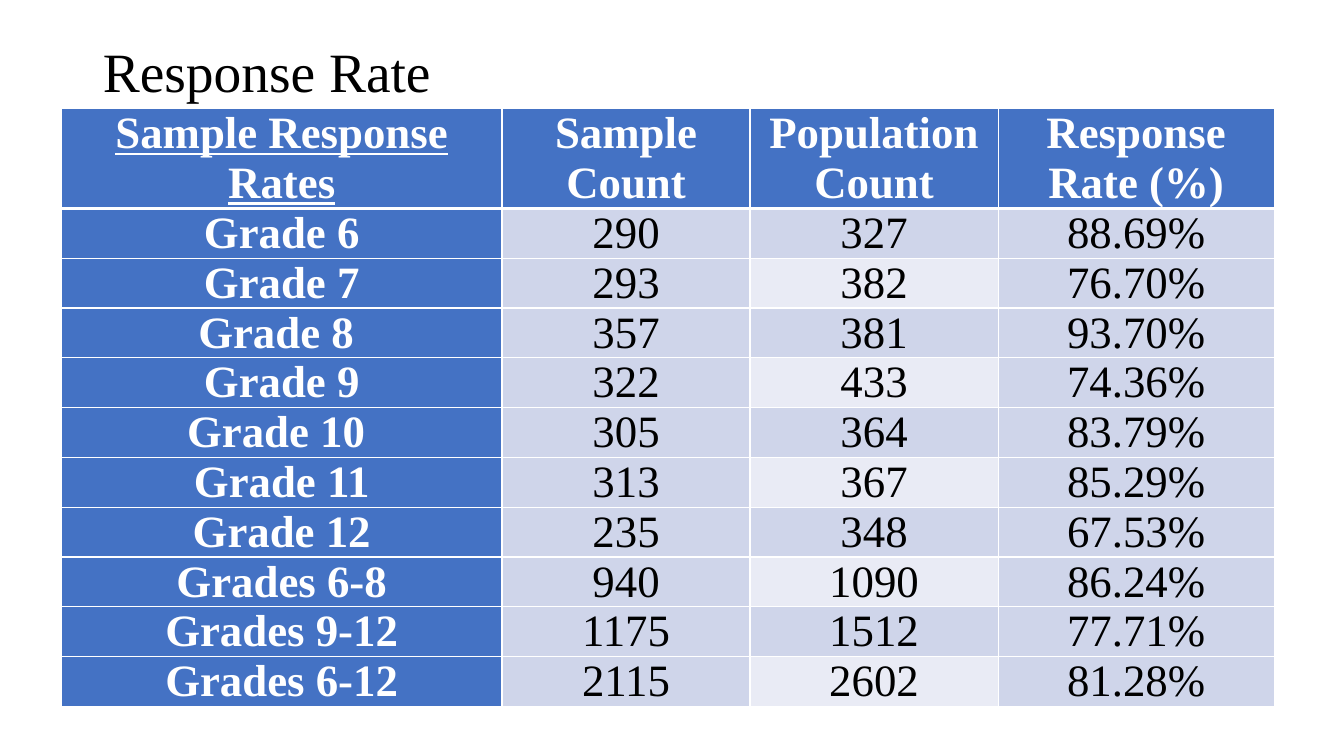
from typing import NamedTuple

from lxml import etree
from pptx import Presentation
from pptx.dml.color import RGBColor
from pptx.enum.text import MSO_ANCHOR, MSO_AUTO_SIZE, PP_ALIGN
from pptx.oxml.ns import qn
from pptx.slide import Slide
from pptx.table import _Cell
from pptx.util import Inches, Pt

LEFT = PP_ALIGN.LEFT
CENTER = PP_ALIGN.CENTER
MIDDLE = MSO_ANCHOR.MIDDLE
NO_FIT = MSO_AUTO_SIZE.NONE

BLACK = RGBColor(0x00, 0x00, 0x00)
WHITE = RGBColor(0xFF, 0xFF, 0xFF)
BLUE = RGBColor(0x44, 0x72, 0xC4)
BAND = RGBColor(0xCF, 0xD5, 0xEA)
PALE = RGBColor(0xE9, 0xEB, 0xF5)
FONT = "Times New Roman"

WIDTHS = (4.37, 2.46, 2.46, 2.74)
HEAD_HEIGHT = 0.94
ROW_HEIGHT = 0.49
THIN = 1
THICK = 3


class Rate(NamedTuple):
    label: str
    sample: str
    total: str
    rate: str


HEAD = Rate("Sample Response Rates", "Sample Count", "Population\nCount", "Response Rate (%)")
RATES = (
    Rate("Grade 6", "290", "327", "88.69%"),
    Rate("Grade 7", "293", "382", "76.70%"),
    Rate("Grade 8 ", "357", "381", "93.70%"),
    Rate("Grade 9", "322", "433", "74.36%"),
    Rate("Grade 10 ", "305", "364", "83.79%"),
    Rate("Grade 11", "313", "367", "85.29%"),
    Rate("Grade 12", "235", "348", "67.53%"),
    Rate("Grades 6-8", "940", "1090", "86.24%"),
    Rate("Grades 9-12", "1175", "1512", "77.71%"),
    Rate("Grades 6-12", "2115", "2602", "81.28%"),
)


def add_edge(cell: _Cell, side: str, width: int) -> None:
    props = cell._tc.get_or_add_tcPr()
    line = etree.SubElement(props, qn(f"a:ln{side}"), w=str(Pt(width)))
    fill = etree.SubElement(line, qn("a:solidFill"))
    etree.SubElement(fill, qn("a:srgbClr"), val=str(WHITE))


def pick_fill(row: int, col: int) -> RGBColor:
    if row == 0 or col == 0:
        return BLUE
    return PALE if col == 2 and row % 2 == 0 else BAND


def draw_cell(cell: _Cell, text: str, row: int, col: int) -> None:
    strong = row == 0 or col == 0
    cell.text_frame.text = text
    cell.vertical_anchor = MIDDLE
    cell.margin_left = cell.margin_right = Inches(0.07)
    cell.margin_top = cell.margin_bottom = 0
    for side in "LRTB":
        heavy = (row, side) in ((0, "B"), (1, "T"))
        add_edge(cell, side, THICK if heavy else THIN)
    cell.fill.solid()
    cell.fill.fore_color.rgb = pick_fill(row, col)
    for para in cell.text_frame.paragraphs:
        para.alignment = CENTER
        for run in para.runs:
            run.font.name = FONT
            run.font.size = Pt(32)
            run.font.bold = strong
            run.font.underline = row == 0 and col == 0
            run.font.color.rgb = WHITE if strong else BLACK


def draw_title(slide: Slide, text: str) -> None:
    title = slide.shapes.title
    title.left, title.top = Inches(0.92), Inches(0.4)
    title.width, title.height = Inches(11.5), Inches(0.68)
    frame = title.text_frame
    frame.text = text
    frame.auto_size = NO_FIT
    frame.vertical_anchor = MIDDLE
    para = frame.paragraphs[0]
    para.alignment = LEFT
    para.line_spacing = 0.9
    font = para.runs[0].font
    font.name = FONT
    font.size = Pt(39.6)
    font.color.rgb = BLACK


def draw_table(slide: Slide) -> None:
    rows = (HEAD, *RATES)
    height = HEAD_HEIGHT + ROW_HEIGHT * len(RATES)
    frame = slide.shapes.add_table(
        len(rows), len(WIDTHS), Inches(0.61), Inches(1.08),
        Inches(sum(WIDTHS)), Inches(height),
    )
    table = frame.table
    table.first_col = True
    for col, width in enumerate(WIDTHS):
        table.columns[col].width = Inches(width)
    for row, rate in enumerate(rows):
        table.rows[row].height = Inches(ROW_HEIGHT if row else HEAD_HEIGHT)
        for col, text in enumerate(rate):
            draw_cell(table.cell(row, col), text, row, col)


def main() -> None:
    deck = Presentation()
    deck.slide_width = Inches(13.33)
    deck.slide_height = Inches(7.5)
    slide = deck.slides.add_slide(deck.slide_layouts[5])
    draw_title(slide, "Response Rate")
    draw_table(slide)
    deck.save("out.pptx")


if __name__ == "__main__":
    main()
